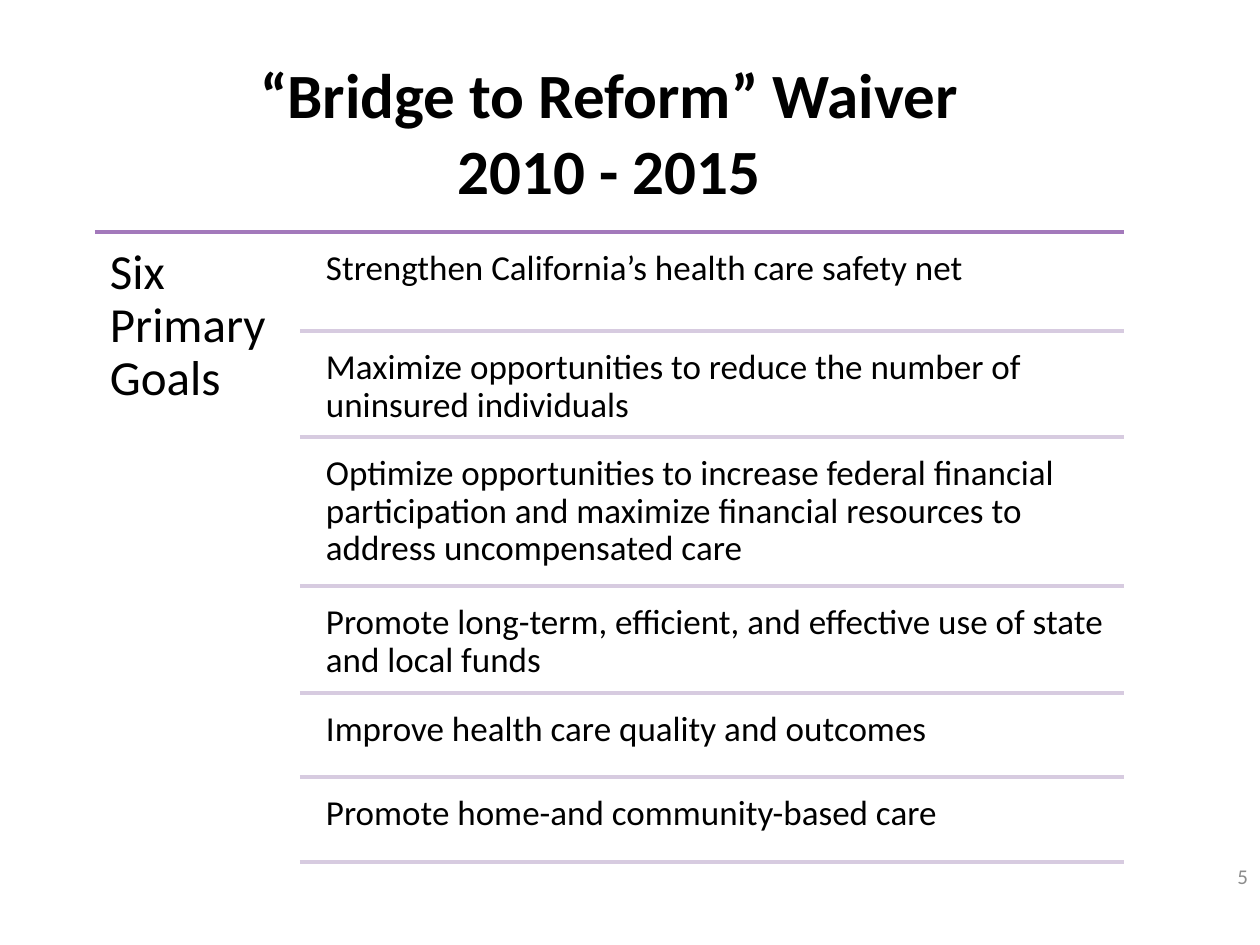
from dataclasses import dataclass

from lxml.etree import SubElement
from pptx import Presentation
from pptx.dml.color import RGBColor
from pptx.enum.shapes import MSO_CONNECTOR
from pptx.enum.text import MSO_ANCHOR, PP_ALIGN
from pptx.oxml.ns import qn
from pptx.util import Pt


@dataclass(frozen=True)
class Theme:
    font: str = "Calibri"
    ink: str = "000000"
    muted: str = "8C8C8C"
    top_rule: str = "A379BB"
    goal_rule: str = "D7CBE0"
    title: int = 36
    heading: int = 28
    goal: int = 20
    number: int = 12


theme = Theme()
SCALE = 914400 / 126  # EMU in one px


def px(*lengths):
    return [round(n * SCALE) for n in lengths]


prs = Presentation()
prs.slide_width, prs.slide_height = px(1260, 945)
s = prs.slides.add_slide(prs.slide_layouts[5])


def add_rule(x1, x2, y, color):
    line = s.shapes.add_connector(MSO_CONNECTOR.STRAIGHT, *px(x1, y, x2, y))
    line.line.color.rgb = RGBColor.from_string(color)
    line.line.width = Pt(2)
    SubElement(line._element.spPr, qn("a:effectLst"))


def add_text(box, text, size, inset, color=theme.ink):
    sp = s.shapes.add_textbox(*px(*box))
    tf = sp.text_frame
    tf.word_wrap = True
    (tf.margin_left, tf.margin_top,
     tf.margin_right, tf.margin_bottom) = px(*[inset] * 4)
    tf.text = text
    p = tf.paragraphs[0]
    p.line_spacing = 0.9
    font = p.runs[0].font
    font.name, font.size = theme.font, Pt(size)
    font.color.rgb = RGBColor.from_string(color)
    return tf


# Title
title = s.shapes.title
title.left, title.top, title.width, title.height = px(63, 53, 1092, 157)
tf = title.text_frame
tf.text = "“Bridge to Reform” Waiver\v2010 - 2015"
tf.vertical_anchor = MSO_ANCHOR.MIDDLE
p = tf.paragraphs[0]
p.alignment = PP_ALIGN.CENTER
for r in p.runs:
    r.font.name, r.font.size, r.font.bold = theme.font, Pt(theme.title), True
    r.font.color.rgb = RGBColor.from_string(theme.ink)

# Heading column under the top rule
LEFT, GOAL_LEFT, RIGHT, TOP = 95, 300, 1124, 232
add_rule(LEFT, RIGHT, TOP, theme.top_rule)
add_text((LEFT, TOP, GOAL_LEFT - LEFT, 640), "Six Primary Goals", theme.heading, 15)

# Goals, each with the y of the rule that closes it
goals = [
    ("Strengthen California’s health care safety net", 331),
    ("Maximize opportunities to reduce the number of uninsured individuals", 437),
    ("Optimize opportunities to increase federal financial participation and "
     "maximize financial resources to address uncompensated care", 586),
    ("Promote long-term, efficient, and effective use of state and local funds", 693),
    ("Improve health care quality and outcomes", 777),
    ("Promote home-and community-based care", 862),
]
INDENT, GAP = 16, 8
y = TOP
for goal, bottom in goals:
    box = (GOAL_LEFT + INDENT, y + GAP, RIGHT - GOAL_LEFT - INDENT, bottom - y - GAP)
    add_text(box, goal, theme.goal, 10)
    add_rule(GOAL_LEFT, RIGHT, bottom, theme.goal_rule)
    y = bottom

# Slide number
tf = add_text((1166, 851, 94, 50), "5", theme.number, 12, theme.muted)
tf.vertical_anchor = MSO_ANCHOR.MIDDLE
tf.paragraphs[0].alignment = PP_ALIGN.RIGHT
tf.paragraphs[0].line_spacing = 1.0

prs.save("out.pptx")
